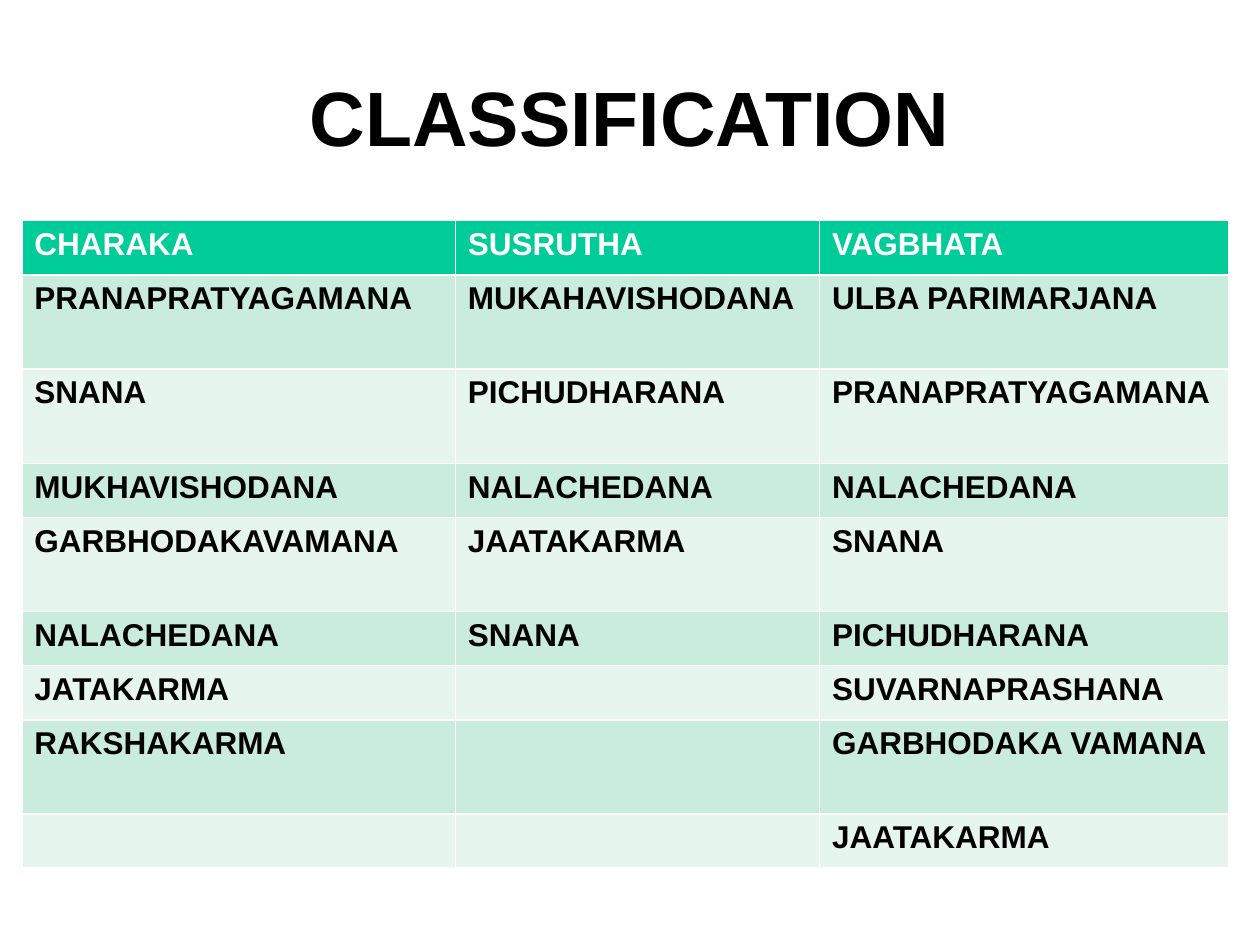
from pptx import Presentation
from pptx.dml.color import RGBColor
from pptx.enum.text import MSO_ANCHOR, PP_ALIGN
from pptx.util import Cm, Pt

BLACK = RGBColor(0x00, 0x00, 0x00)
WHITE = RGBColor(0xFF, 0xFF, 0xFF)
GREEN = RGBColor(0x00, 0xCC, 0x99)
BANDS = (RGBColor(0xCA, 0xEC, 0xDD), RGBColor(0xE6, 0xF6, 0xEF))

TITLE_FONT = {"name": "Arial", "size": Pt(44), "bold": True}
CELL_FONT = {"name": "Arial", "size": Pt(18), "bold": True}

SHORT, TALL = 1.09, 1.9
COL_WIDTHS = (8.74, 7.34, 8.26)
ROWS = [
    (SHORT, "CHARAKA", "SUSRUTHA", "VAGBHATA"),
    (TALL, "PRANAPRATYAGAMANA", "MUKAHAVISHODANA", "ULBA PARIMARJANA"),
    (TALL, "SNANA", "PICHUDHARANA", "PRANAPRATYAGAMANA"),
    (SHORT, "MUKHAVISHODANA", "NALACHEDANA", "NALACHEDANA"),
    (TALL, "GARBHODAKAVAMANA", "JAATAKARMA", "SNANA"),
    (SHORT, "NALACHEDANA", "SNANA", "PICHUDHARANA"),
    (SHORT, "JATAKARMA", "", "SUVARNAPRASHANA"),
    (TALL, "RAKSHAKARMA", "", "GARBHODAKA VAMANA"),
    (SHORT, "", "", "JAATAKARMA"),
]


def write_text(tf, text, font, color):
    p = tf.paragraphs[0]
    p.text = text
    # Paragraph and run formats, so that empty cells keep their size too
    for target in [p.font] + [r.font for r in p.runs]:
        for name, value in font.items():
            setattr(target, name, value)
        target.color.rgb = color
    return p


def add_title(s, text):
    sp = s.shapes.title
    box = {"left": 1.9, "top": 0.64, "width": 21.6, "height": 3.38}
    for name, value in box.items():
        setattr(sp, name, Cm(value))
    tf = sp.text_frame
    tf.vertical_anchor = MSO_ANCHOR.MIDDLE
    write_text(tf, text, TITLE_FONT, BLACK).alignment = PP_ALIGN.CENTER


def add_classification_table(s):
    heights = [row[0] for row in ROWS]
    table = s.shapes.add_table(
        len(ROWS), len(COL_WIDTHS), Cm(0.44), Cm(4.45),
        Cm(sum(COL_WIDTHS)), Cm(sum(heights))).table
    for column, width in zip(table.columns, COL_WIDTHS):
        column.width = Cm(width)
    for i, (height, *texts) in enumerate(ROWS):
        table.rows[i].height = Cm(height)
        # Header row first, then alternating bands
        fill, color = (BANDS[(i - 1) % 2], BLACK) if i else (GREEN, WHITE)
        for cell, text in zip(table.rows[i].cells, texts):
            cell.fill.solid()
            cell.fill.fore_color.rgb = fill
            write_text(cell.text_frame, text, CELL_FONT, color)


def main():
    prs = Presentation()
    prs.slide_width, prs.slide_height = Cm(25.4), Cm(19.05)
    s = prs.slides.add_slide(prs.slide_layouts[5])
    add_title(s, "CLASSIFICATION")
    add_classification_table(s)
    prs.save("out.pptx")


if __name__ == "__main__":
    main()
